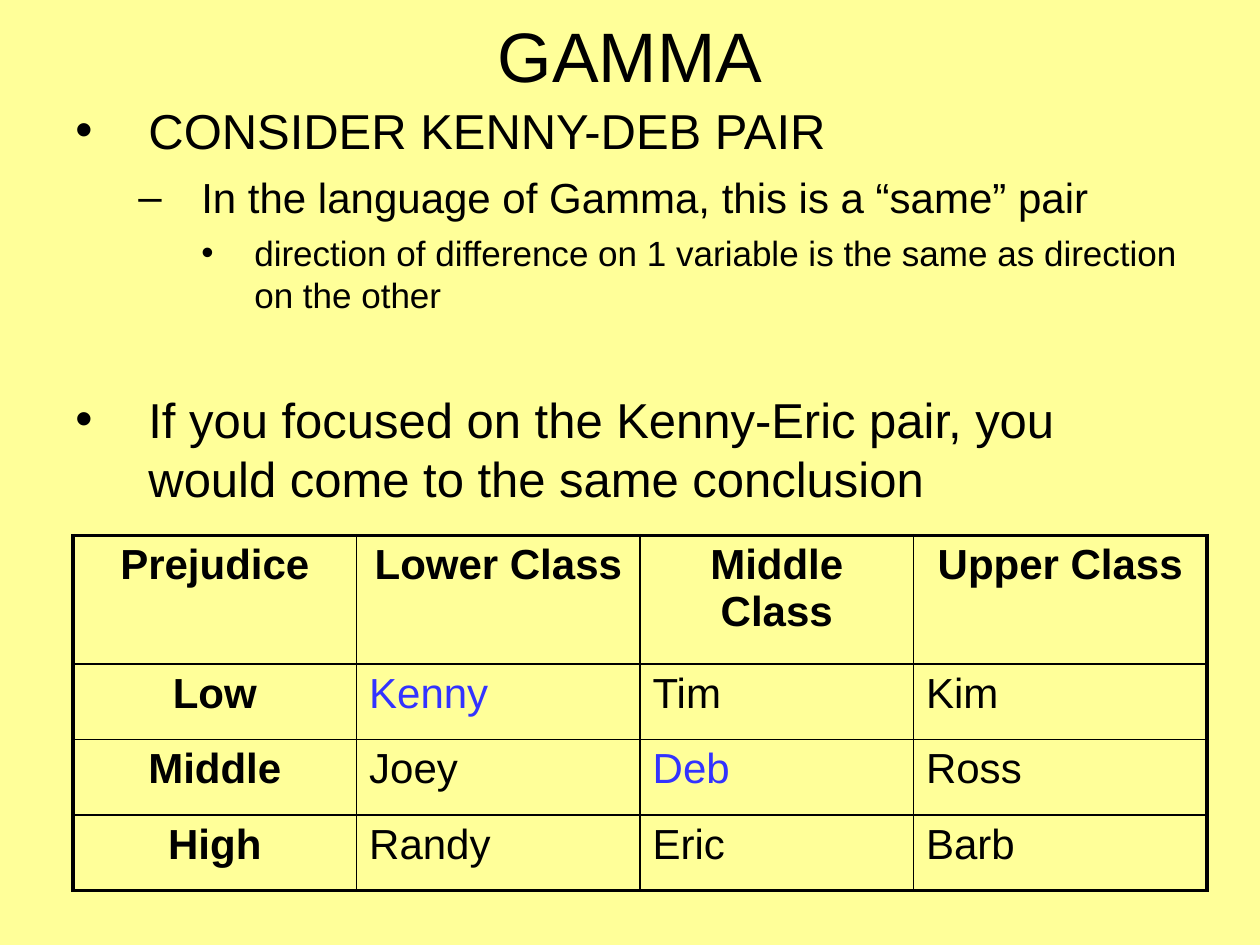
from lxml.etree import SubElement
from pptx import Presentation
from pptx.dml.color import RGBColor
from pptx.enum.text import MSO_ANCHOR, MSO_AUTO_SIZE, PP_ALIGN
from pptx.oxml.ns import qn
from pptx.util import Inches, Pt

INK, ACCENT, PAPER = "000000", "3333FF", "FFFF99"


def rgb(color):
    return RGBColor.from_string(color)


def add_run(para, text, size, color=INK, bold=False):
    span = para.add_run()
    span.text = text
    span.font.name = "Arial"
    span.font.size = Pt(size)
    span.font.bold = bold
    span.font.color.rgb = rgb(color)


deck = Presentation()
deck.slide_width, deck.slide_height = Inches(10), Inches(7.5)
page = deck.slides.add_slide(deck.slide_layouts[5])
page.background.fill.solid()
page.background.fill.fore_color.rgb = rgb(PAPER)

# Title
title = page.shapes.title
title.left, title.top = Inches(0.5), Inches(0.17)
title.width, title.height = Inches(9), Inches(0.53)
title.text_frame.auto_size = MSO_AUTO_SIZE.NONE
title.text_frame.vertical_anchor = MSO_ANCHOR.MIDDLE
para = title.text_frame.paragraphs[0]
para.alignment = PP_ALIGN.CENTER
add_run(para, "GAMMA", 40)

# Outline: level, space before in points, text
outline = [
    (0, 3, "CONSIDER KENNY-DEB PAIR"),
    (1, 7, "In the language of Gamma, this is a “same” pair"),
    (2, 5.5, "direction of difference on 1 variable is the same as direction on the other"),
    (0, 42, "If you focused on the Kenny-Eric pair, you would come to the same conclusion"),
]
# Each level: text indent, hanging indent, bullet, size
levels = [(0.58, 0.58, "•", 28), (1, 0.5, "–", 24), (1.42, 0.42, "•", 20)]
box = page.shapes.add_textbox(Inches(0.5), Inches(0.75), Inches(9), Inches(3.33))
box.text_frame.word_wrap = True
for i, (level, space, text) in enumerate(outline):
    indent, hanging, bullet, size = levels[level]
    para = box.text_frame.add_paragraph() if i else box.text_frame.paragraphs[0]
    para.level = level
    para.space_before = Pt(space)
    props = para._p.get_or_add_pPr()
    props.set("marL", str(Inches(indent)))
    props.set("indent", str(-Inches(hanging)))
    SubElement(props, qn("a:buFont"), typeface="Arial")
    SubElement(props, qn("a:buChar"), char=bullet)
    add_run(para, text, size)

# Table
rows = [
    ["Prejudice", "Lower Class", "Middle Class", "Upper Class"],
    ["Low", "Kenny", "Tim", "Kim"],
    ["Middle", "Joey", "Deb", "Ross"],
    ["High", "Randy", "Eric", "Barb"],
]
widths = [2.25, 2.25, 2.17, 2.33]
heights = [1.02, 0.6, 0.6, 0.6]
highlighted = {"Kenny", "Deb"}
grid = page.shapes.add_table(len(rows), len(widths), Inches(0.58), Inches(4.25),
                             Inches(sum(widths)), Inches(sum(heights))).table
grid.first_row = grid.horz_banding = False
for column, width in zip(grid.columns, widths):
    column.width = Inches(width)
for row, height in zip(grid.rows, heights):
    row.height = Inches(height)

last_row, last_col = len(rows) - 1, len(widths) - 1
for r, names in enumerate(rows):
    for c, name in enumerate(names):
        cell = grid.cell(r, c)
        heading = r == 0 or c == 0
        para = cell.text_frame.paragraphs[0]
        para.alignment = PP_ALIGN.CENTER if heading else PP_ALIGN.LEFT
        add_run(para, name, 24, ACCENT if name in highlighted else INK, heading)

        # Borders: heavy on the outside, thin inside
        props = cell._tc.get_or_add_tcPr()
        outer = {"a:lnL": c == 0, "a:lnR": c == last_col,
                 "a:lnT": r == 0, "a:lnB": r == last_row}
        for side, heavy in outer.items():
            line = SubElement(props, qn(side), w=str(Pt(2.25 if heavy else 1)))
            SubElement(SubElement(line, qn("a:solidFill")), qn("a:srgbClr"), val=INK)
        cell.fill.background()

deck.save("out.pptx")
